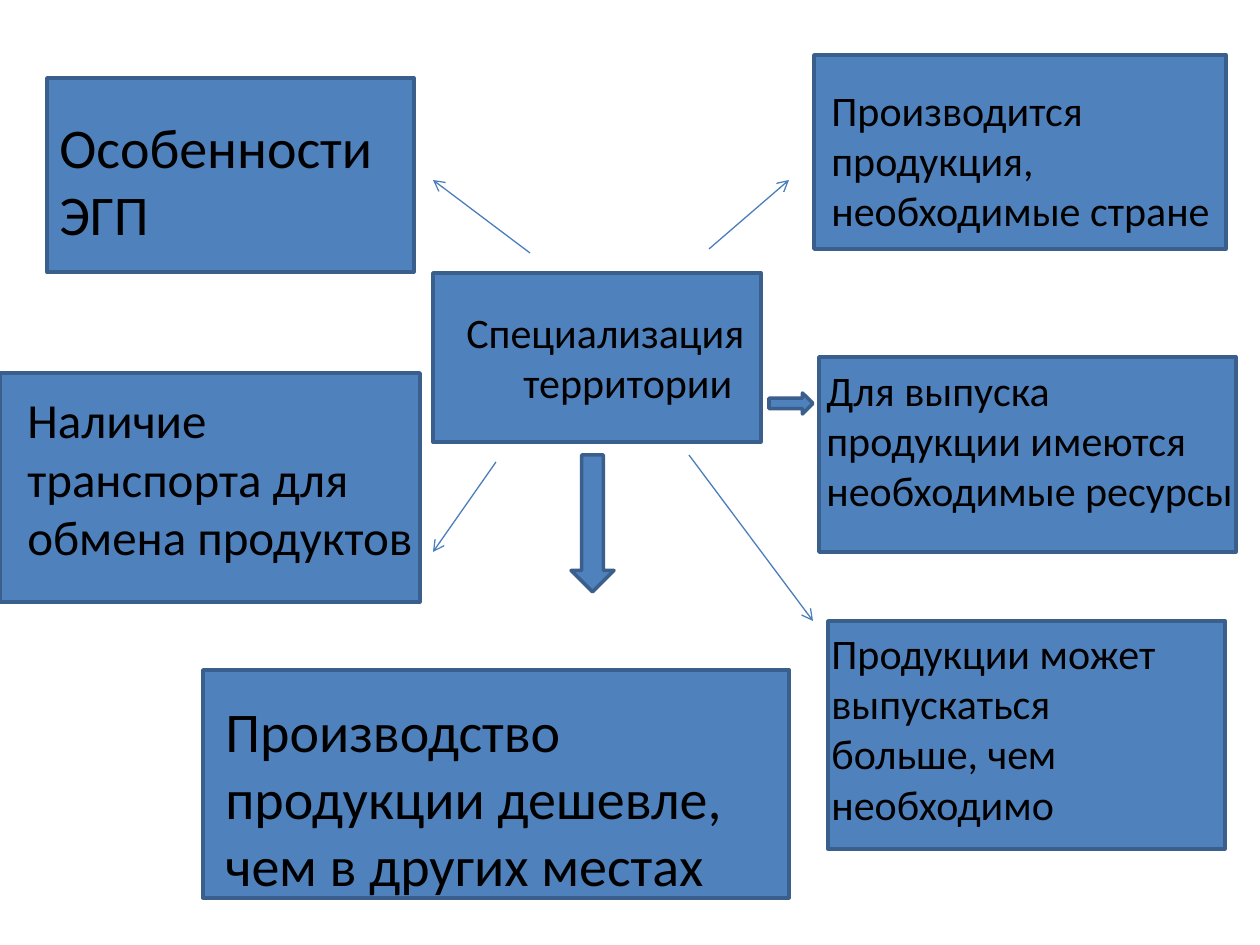
from typing import NamedTuple

import pptx
import pptx.dml.color
import pptx.enum.shapes
import pptx.enum.text
import pptx.oxml.ns
import pptx.oxml.xmlchemy
import pptx.util

PX_PER_INCH = 126
BLUE = pptx.dml.color.RGBColor(0x4F, 0x81, 0xBD)
DARK_BLUE = pptx.dml.color.RGBColor(0x3A, 0x5F, 0x8C)
ARROW_BLUE = pptx.dml.color.RGBColor(0x4B, 0x7E, 0xBC)
BLACK = pptx.dml.color.RGBColor(0, 0, 0)
FONT = "Calibri"
SHAPE = pptx.enum.shapes.MSO_SHAPE


class Area(NamedTuple):
    left: int
    top: int
    width: int
    height: int


class Factor(NamedTuple):
    wording: str
    size: int
    box: Area
    label: Area
    hanging: int = 0


class Ray(NamedTuple):
    x1: int
    y1: int
    x2: int
    y2: int


FACTORS = [
    Factor("Специализация территории", 24,
           Area(433, 273, 328, 169), Area(454, 300, 318, 115), hanging=57),
    Factor("Производится продукция, необходимые стране", 24,
           Area(814, 55, 412, 194), Area(819, 78, 427, 165)),
    Factor("Для выпуска продукции имеются необходимые ресурсы", 24,
           Area(819, 357, 417, 195), Area(814, 358, 446, 165)),
    Factor("Продукции может выпускаться больше, чем необходимо", 24,
           Area(828, 621, 397, 228), Area(819, 621, 387, 217)),
    Factor("Производство продукции дешевле, чем в других местах", 32,
           Area(203, 670, 586, 228), Area(213, 690, 556, 217)),
    Factor("Наличие транспорта для обмена продуктов", 28,
           Area(0, 373, 420, 229), Area(15, 383, 420, 190)),
    Factor("Особенности ЭГП", 32,
           Area(47, 78, 367, 194), Area(47, 106, 355, 149)),
]
BLOCK_ARROWS = [
    (SHAPE.DOWN_ARROW, Area(571, 455, 43, 137)),
    (SHAPE.RIGHT_ARROW, Area(769, 393, 44, 21)),
]
RAYS = [
    Ray(689, 455, 813, 621),
    Ray(496, 462, 433, 552),
    Ray(709, 249, 789, 180),
    Ray(530, 253, 433, 180),
]


def px(length: int) -> pptx.util.Emu:
    return pptx.util.Emu(round(length * 914400 / PX_PER_INCH))


def add_block(slide, kind, area: Area) -> None:
    block = slide.shapes.add_shape(kind, *map(px, area))
    block.shadow.inherit = False
    block.fill.solid()
    block.fill.fore_color.rgb = BLUE
    block.line.color.rgb = DARK_BLUE
    block.line.width = pptx.util.Pt(2)


def add_label(slide, factor: Factor) -> None:
    frame = slide.shapes.add_textbox(*map(px, factor.label)).text_frame
    frame.word_wrap = True
    frame.auto_size = pptx.enum.text.MSO_AUTO_SIZE.SHAPE_TO_FIT_TEXT
    frame.text = factor.wording
    paragraph = frame.paragraphs[0]
    if factor.hanging:
        properties = paragraph._p.get_or_add_pPr()
        properties.set("marL", str(px(factor.hanging)))
        properties.set("indent", str(px(-factor.hanging)))
    font = paragraph.runs[0].font
    font.name = FONT
    font.size = pptx.util.Pt(factor.size)
    font.color.rgb = BLACK


def add_ray(slide, ray: Ray) -> None:
    """Draw a thin line with an open arrowhead at its outer end."""
    connector = slide.shapes.add_connector(
        pptx.enum.shapes.MSO_CONNECTOR.STRAIGHT, *map(px, ray))
    connector.line.color.rgb = ARROW_BLUE
    connector.line.width = pptx.util.Pt(0.75)
    head = pptx.oxml.xmlchemy.OxmlElement("a:tailEnd")
    head.set("type", "arrow")
    properties = connector._element.spPr
    properties.find(pptx.oxml.ns.qn("a:ln")).append(head)
    properties.append(pptx.oxml.xmlchemy.OxmlElement("a:effectLst"))


def main() -> None:
    deck = pptx.Presentation()
    deck.slide_width = pptx.util.Inches(10)
    deck.slide_height = pptx.util.Inches(7.5)
    slide = deck.slides.add_slide(deck.slide_layouts[6])
    for factor in FACTORS:
        add_block(slide, SHAPE.RECTANGLE, factor.box)
    for factor in FACTORS:
        add_label(slide, factor)
    for kind, area in BLOCK_ARROWS:
        add_block(slide, kind, area)
    for ray in RAYS:
        add_ray(slide, ray)
    deck.save("out.pptx")


if __name__ == "__main__":
    main()
